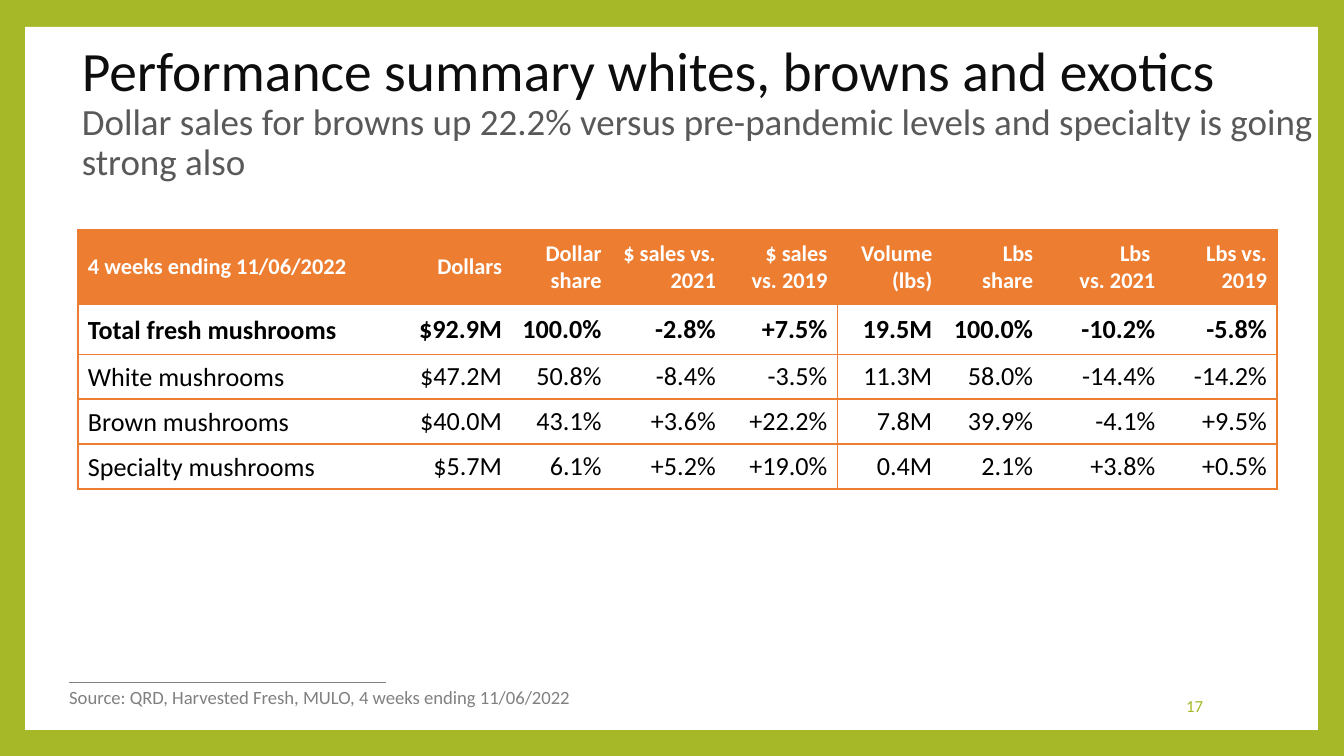
"""Build the mushroom performance summary slide."""
from lxml.etree import SubElement
from pptx import Presentation
from pptx.dml.color import RGBColor
from pptx.enum.shapes import MSO_CONNECTOR, MSO_SHAPE
from pptx.enum.text import MSO_ANCHOR as Anchor, PP_ALIGN as Align
from pptx.oxml.ns import qn
from pptx.util import Pt

GREEN = RGBColor(0xA6, 0xB7, 0x27)
ORANGE = RGBColor(0xED, 0x7D, 0x31)
WHITE = RGBColor(0xFF, 0xFF, 0xFF)
BLACK = RGBColor(0, 0, 0)
TITLE_INK = RGBColor(0x0D, 0x0D, 0x0D)
SUBTITLE_INK = RGBColor(0x59, 0x59, 0x59)
GRAY = RGBColor(0x80, 0x80, 0x80)

COLUMN_WIDTHS = [170.6, 61.9, 53.3, 61.2, 59.8, 56.2, 54, 65.5, 59.8]
ROW_HEIGHTS = [39.6, 27, 24, 24, 24]
ROWS = [
    ["4 weeks ending 11/06/2022", "Dollars", "Dollar share", "$ sales vs. 2021", "$ sales vs. 2019",
     "Volume (lbs)", "Lbs\nshare", "Lbs \vvs. 2021", "Lbs vs. 2019"],
    ["Total fresh mushrooms", "$92.9M", "100.0%", "-2.8%", "+7.5%", "19.5M", "100.0%", "-10.2%", "-5.8%"],
    ["White mushrooms", "$47.2M", "50.8%", "-8.4%", "-3.5%", "11.3M", "58.0%", "-14.4%", "-14.2%"],
    ["Brown mushrooms", "$40.0M", "43.1%", "+3.6%", "+22.2%", "7.8M", "39.9%", "-4.1%", "+9.5%"],
    ["Specialty mushrooms", "$5.7M", "6.1%", "+5.2%", "+19.0%", "0.4M", "2.1%", "+3.8%", "+0.5%"],
]
GROUP_STARTS = (0, 5)
GROUP_ENDS = (4, 8)


def add_run(paragraph, text, size, color, bold=False):
    run = paragraph.add_run()
    run.text = text
    run.font.name = "Calibri"
    run.font.size = Pt(size)
    run.font.bold = bold
    run.font.color.rgb = color


def add_text_frame(left, top, width, height, anchor, wrap=True):
    box = slide.shapes.add_textbox(Pt(left), Pt(top), Pt(width), Pt(height))
    box.text_frame.word_wrap = wrap
    box.text_frame.vertical_anchor = anchor
    return box.text_frame


presentation = Presentation()
presentation.slide_width = Pt(720)
presentation.slide_height = Pt(405)
slide = presentation.slides.add_slide(presentation.slide_layouts[6])
slide.background.fill.solid()
slide.background.fill.fore_color.rgb = GREEN

panel = slide.shapes.add_shape(MSO_SHAPE.RECTANGLE, Pt(13.5), Pt(14.4), Pt(692.6), Pt(376.6))
panel.shadow.inherit = False
panel.fill.solid()
panel.fill.fore_color.rgb = WHITE
panel.line.fill.background()

source_rule = slide.shapes.add_connector(MSO_CONNECTOR.STRAIGHT, Pt(36.8), Pt(365.6), Pt(206.8), Pt(365.6))
source_rule.line.color.rgb = GRAY
source_rule.line.width = Pt(0.79)
SubElement(source_rule._element.spPr, qn("a:effectLst"))

title = add_text_frame(36.8, 32.4, 674.6, 56.9, Anchor.MIDDLE).paragraphs[0]
title.line_spacing = 0.9
add_run(title, "Performance summary whites, browns and exotics", 29.7, TITLE_INK)
title.add_line_break()
add_run(title, "Dollar sales for browns up 22.2% versus pre-pandemic levels and specialty is going strong also",
        19.8, SUBTITLE_INK)

page_number = add_text_frame(550.8, 367.5, 100.8, 21.6, Anchor.MIDDLE).paragraphs[0]
page_number.alignment = Align.RIGHT
add_run(page_number, "17", 9, GREEN)

source = add_text_frame(30, 363.8, 282.2, 19.4, Anchor.TOP, wrap=False).paragraphs[0]
add_run(source, "Source: QRD, Harvested Fresh, MULO, 4 weeks ending 11/06/2022", 10, GRAY)

table = slide.shapes.add_table(len(ROWS), len(COLUMN_WIDTHS), Pt(41.8), Pt(123.3),
                               Pt(sum(COLUMN_WIDTHS)), Pt(sum(ROW_HEIGHTS))).table
for column, width in zip(table.columns, COLUMN_WIDTHS):
    column.width = Pt(width)
for row, height in zip(table.rows, ROW_HEIGHTS):
    row.height = Pt(height)

for row_index, texts in enumerate(ROWS):
    is_header = row_index == 0
    for column_index, text in enumerate(texts):
        cell = table.cell(row_index, column_index)
        cell.margin_left = cell.margin_right = Pt(5.3)
        cell.margin_top = cell.margin_bottom = 0
        cell.vertical_anchor = Anchor.MIDDLE

        borders = {"L": column_index in GROUP_STARTS, "R": column_index in GROUP_ENDS, "T": True, "B": True}
        for side, visible in borders.items():
            border = SubElement(cell._tc.get_or_add_tcPr(), qn(f"a:ln{side}"), w=str(Pt(1)))
            if visible:
                SubElement(SubElement(border, qn("a:solidFill")), qn("a:srgbClr"), val=str(ORANGE))
            else:
                SubElement(border, qn("a:noFill"))

        if is_header:
            cell.fill.solid()
            cell.fill.fore_color.rgb = ORANGE
        else:
            cell.fill.background()

        for line_index, line in enumerate(text.split("\n")):
            frame = cell.text_frame
            paragraph = frame.add_paragraph() if line_index else frame.paragraphs[0]
            paragraph.alignment = Align.RIGHT if column_index else Align.LEFT
            if not is_header and column_index == 0:
                paragraph.line_spacing = 1.07
            for part_index, part in enumerate(line.split("\v")):
                if part_index:
                    paragraph.add_line_break()
                add_run(paragraph, part, 12 if is_header else 14, WHITE if is_header else BLACK, row_index < 2)

presentation.save("out.pptx")
